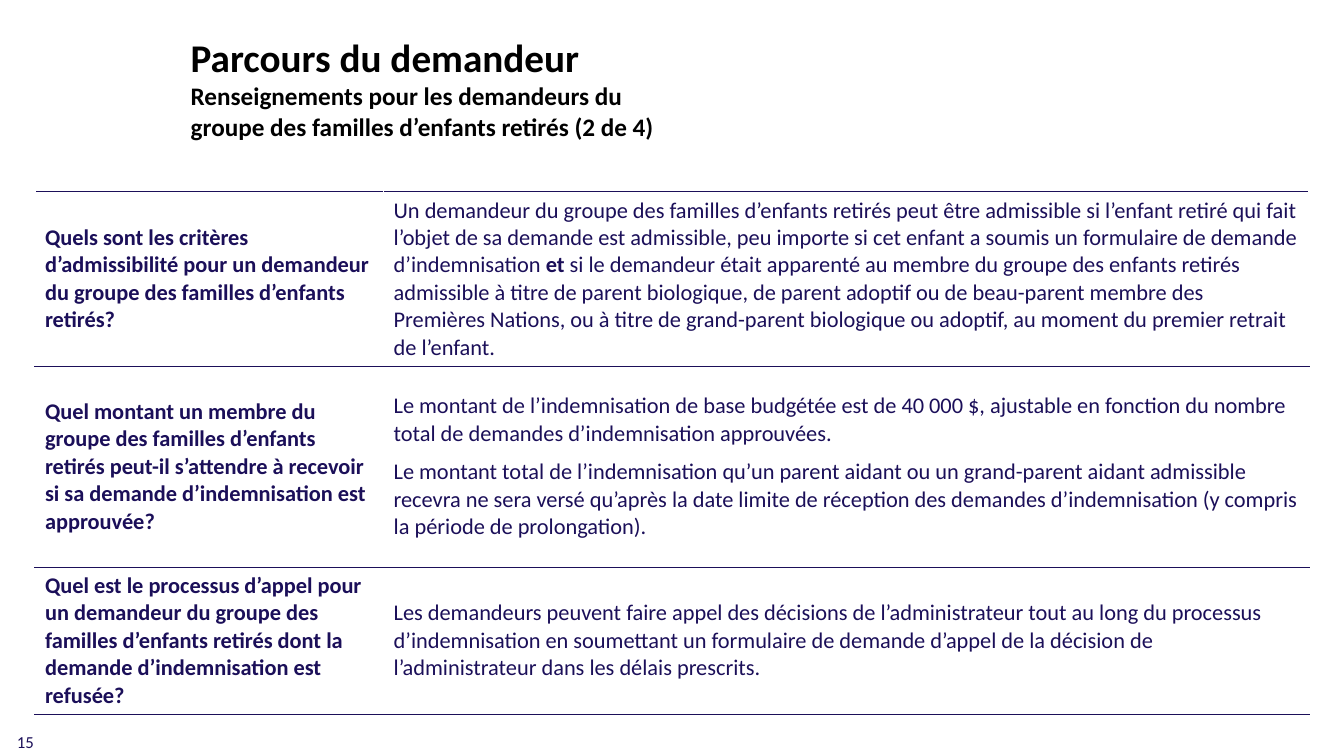
from lxml.etree import SubElement
from pptx import Presentation
from pptx.dml.color import RGBColor
from pptx.enum.text import MSO_ANCHOR, MSO_AUTO_SIZE, PP_ALIGN
from pptx.oxml.ns import qn
from pptx.util import Pt

NAVY = "1B0F59"


def style(para, size, color, bold=False):
    para.alignment = PP_ALIGN.LEFT
    font = para.font
    font.name, font.size, font.bold = "Calibri", Pt(size), bold
    font.color.rgb = RGBColor.from_string(color)


def border(cell, side, color):
    line = SubElement(cell._tc.get_or_add_tcPr(), qn("a:" + side), w=str(Pt(1)))
    SubElement(SubElement(line, qn("a:solidFill")), qn("a:srgbClr"), val=color)


deck = Presentation()
deck.slide_width, deck.slide_height = Pt(960), Pt(540)
slide = deck.slides.add_slide(deck.slide_layouts[5])

# Title and subtitle
title = slide.shapes.title
title.left, title.top, title.width, title.height = Pt(129), Pt(20), Pt(346), Pt(85)
frame = title.text_frame
frame.text = ("Parcours du demandeur\n"
              "Renseignements pour les demandeurs du groupe des familles d’enfants retirés (2 de 4)")
frame.word_wrap = True
frame.auto_size = MSO_AUTO_SIZE.NONE
frame.vertical_anchor = MSO_ANCHOR.MIDDLE
for para, size in zip(frame.paragraphs, (28, 18)):
    style(para, size, "000000", True)

# Questions and answers: each answer is a list of paragraphs, each a list of runs
rows = [
    (116, "Quels sont les critères d’admissibilité pour un demandeur du groupe des familles "
     "d’enfants retirés?",
     [["Un demandeur du groupe des familles d’enfants retirés peut être admissible si l’enfant "
       "retiré qui fait l’objet de sa demande est admissible, peu importe si cet enfant a soumis "
       "un formulaire de demande d’indemnisation ",
       "et ",
       "si le demandeur était apparenté au membre du groupe des enfants retirés admissible à "
       "titre de parent biologique, de parent adoptif ou de beau-parent membre des Premières "
       "Nations, ou à titre de grand-parent biologique ou adoptif, au moment du premier retrait "
       "de l’enfant."]]),
    (143.5, "Quel montant un membre du groupe des familles d’enfants retirés peut-il s’attendre à "
     "recevoir si sa demande d’indemnisation est approuvée?",
     [["Le montant de l’indemnisation de base budgétée est de 40 000 $, ajustable en fonction "
       "du nombre total de demandes d’indemnisation approuvées."],
      ["Le montant total de l’indemnisation qu’un parent aidant ou un grand-parent aidant "
       "admissible recevra ne sera versé qu’après la date limite de réception des demandes "
       "d’indemnisation (y compris la période de prolongation)."]]),
    (100, "Quel est le processus d’appel pour un demandeur du groupe des familles d’enfants "
     "retirés dont la demande d’indemnisation est refusée?",
     [["Les demandeurs peuvent faire appel des décisions de l’administrateur tout au long du "
       "processus d’indemnisation en soumettant un formulaire de demande d’appel de la décision "
       "de l’administrateur dans les délais prescrits."]]),
]
high = sum(row[0] for row in rows)
table = slide.shapes.add_table(3, 2, Pt(25), Pt(137), Pt(910), Pt(high)).table
table.first_row = table.horz_banding = False
table.columns[0].width, table.columns[1].width = Pt(249), Pt(661)

for i, (height, ask, reply) in enumerate(rows):
    table.rows[i].height = Pt(height)
    for j, paras in enumerate(([[ask]], reply)):
        cell = table.cell(i, j)
        cell.vertical_anchor = MSO_ANCHOR.MIDDLE
        for side, color in (("lnL", "FFFFFF"), ("lnR", "FFFFFF"), ("lnT", NAVY), ("lnB", NAVY)):
            border(cell, side, color)
        cell.fill.background()
        frame = cell.text_frame
        for n, runs in enumerate(paras):
            para = frame.add_paragraph() if n else frame.paragraphs[0]
            style(para, 16, NAVY, j == 0)
            if n < len(paras) - 1:
                para.space_after = Pt(8)
            for text in runs:
                run = para.add_run()
                run.text = text
                if text == "et ":
                    run.font.bold = True

# Page number
page = slide.shapes.add_textbox(Pt(5), Pt(520), Pt(216), Pt(20)).text_frame
page.word_wrap = True
page.vertical_anchor = MSO_ANCHOR.MIDDLE
page.text = "15"
style(page.paragraphs[0], 12, NAVY)

deck.save("out.pptx")
